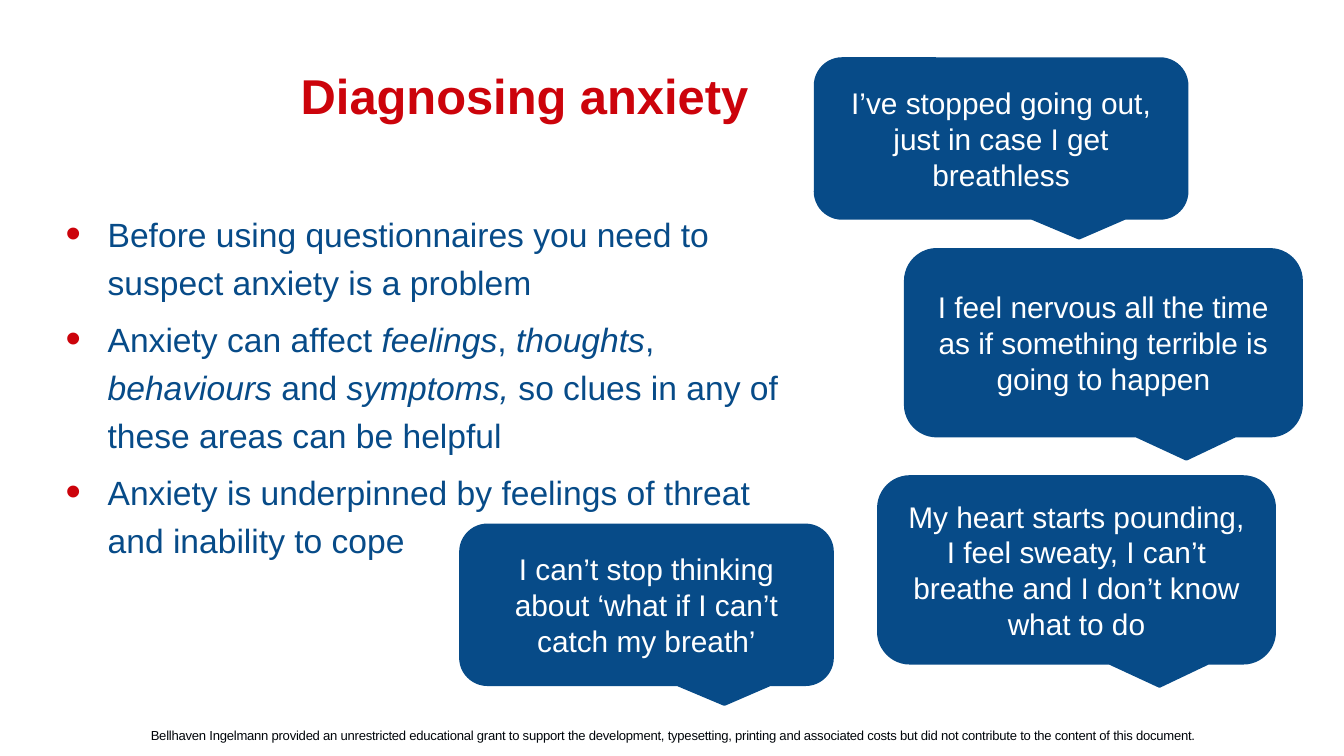
"""Build the slide on diagnosing anxiety with its four speech bubbles."""
from dataclasses import dataclass

from lxml import etree
from pptx import Presentation
from pptx import util as u
from pptx.dml.color import RGBColor
from pptx.enum import shapes, text
from pptx.oxml.ns import qn

RED = RGBColor(0xCC, 0x03, 0x0B)
BLUE = RGBColor(0x07, 0x4B, 0x88)
WHITE = RGBColor(0xFF, 0xFF, 0xFF)
INK = RGBColor(0x00, 0x05, 0x0A)


@dataclass(frozen=True)
class Box:
    left: float
    top: float
    width: float
    height: float

    def lengths(self) -> list[u.Length]:
        return [u.Pt(n) for n in (self.left, self.top, self.width, self.height)]


@dataclass(frozen=True)
class Bubble:
    box: Box
    quote: str


@dataclass(frozen=True)
class Phrase:
    words: str
    italic: bool = False


BUBBLES = (
    Bubble(Box(247, 281.5, 198.7, 85),
           "I can’t stop thinking about ‘what if I can’t catch my breath’"),
    Bubble(Box(437, 31.7, 198.7, 85),
           "I’ve stopped going out, just in case I get breathless"),
    Bubble(Box(485.3, 133.9, 211.7, 99.4),
           "I feel nervous all the time as if something terrible is going to happen"),
    Bubble(Box(470.9, 255.6, 211.7, 99.4),
           "My heart starts pounding, I feel sweaty, I can’t breathe "
           "and I don’t know what to do"),
)

POINTS = (
    (Phrase("Before using questionnaires you need to suspect anxiety is a problem"),),
    (
        Phrase("Anxiety can affect "), Phrase("feelings", True), Phrase(", "),
        Phrase("thoughts", True), Phrase(", "), Phrase("behaviours", True),
        Phrase(" and "), Phrase("symptoms,", True),
        Phrase(" so clues in any of these areas can be helpful"),
    ),
    (Phrase("Anxiety is underpinned by feelings of threat and inability to cope"),),
)

FUNDING = (
    "Bellhaven Ingelmann provided an unrestricted educational grant to support "
    "the development, typesetting, printing and associated costs but did not "
    "contribute to the content of this document."
)


def add_bullet(paragraph, indent: float) -> None:
    properties = paragraph._p.get_or_add_pPr()
    properties.set("marL", str(u.Pt(indent)))
    properties.set("indent", str(-u.Pt(indent)))
    colour = etree.SubElement(properties, qn("a:buClr"))
    etree.SubElement(colour, qn("a:srgbClr"), val=str(RED))
    etree.SubElement(properties, qn("a:buSzPct"), val="130000")
    etree.SubElement(properties, qn("a:buFont"), typeface="Arial")
    etree.SubElement(properties, qn("a:buChar"), char="•")


def write(frame, paragraphs, *, size: float, colour: RGBColor, bold: bool = False,
          align=text.PP_ALIGN.LEFT, anchor=text.MSO_ANCHOR.TOP, bullets: bool = False,
          line_spacing: float | None = None, gap: float = 0, tracking: int = 0) -> None:
    frame.word_wrap = True
    frame.vertical_anchor = anchor
    for index, phrases in enumerate(paragraphs):
        paragraph = frame.add_paragraph() if index else frame.paragraphs[0]
        paragraph.alignment = align
        if bullets:
            add_bullet(paragraph, 22.5)
        if line_spacing:
            paragraph.line_spacing = line_spacing
        if index and gap:
            paragraph.space_before = u.Pt(gap)
        for phrase in phrases:
            run = paragraph.add_run()
            run.text = phrase.words
            run.font.name = "Arial"
            run.font.size = u.Pt(size)
            run.font.bold = bold
            run.font.italic = phrase.italic
            run.font.color.rgb = colour
            if tracking:
                run._r.get_or_add_rPr().set("spc", str(tracking))


def add_frame(slide, box: Box):
    return slide.shapes.add_textbox(*box.lengths()).text_frame


def draw_bubble(slide, bubble: Bubble) -> None:
    callout = slide.shapes.add_shape(
        shapes.MSO_SHAPE.ROUNDED_RECTANGULAR_CALLOUT, *bubble.box.lengths())
    callout.adjustments[0] = 0.21
    callout.shadow.inherit = False
    callout.fill.solid()
    callout.fill.fore_color.rgb = BLUE
    callout.line.color.rgb = BLUE
    callout.line.width = u.Pt(2)
    write(callout.text_frame, [[Phrase(bubble.quote)]], size=16, colour=WHITE,
          align=text.PP_ALIGN.CENTER, anchor=text.MSO_ANCHOR.MIDDLE)


def main() -> None:
    deck = Presentation()
    deck.slide_width, deck.slide_height = u.Pt(720), u.Pt(405)
    slide = deck.slides.add_slide(deck.slide_layouts[6])

    funding = add_frame(slide, Box(79.9, 388.8, 587.5, 10))
    funding.margin_left = funding.margin_top = u.Pt(0.9)
    funding.margin_right = funding.margin_bottom = u.Pt(0)
    write(funding, [[Phrase(FUNDING)]], size=7, colour=INK, tracking=-10)

    title = add_frame(slide, Box(154, 31.7, 566, 44.6))
    write(title, [[Phrase("Diagnosing anxiety")]], size=26.2, colour=RED, bold=True)

    body = add_frame(slide, Box(28.1, 106.6, 397.4, 207.4))
    write(body, POINTS, size=18, colour=BLUE, bullets=True, line_spacing=1.2, gap=4.3)

    for bubble in BUBBLES:
        draw_bubble(slide, bubble)

    deck.save("out.pptx")


if __name__ == "__main__":
    main()
